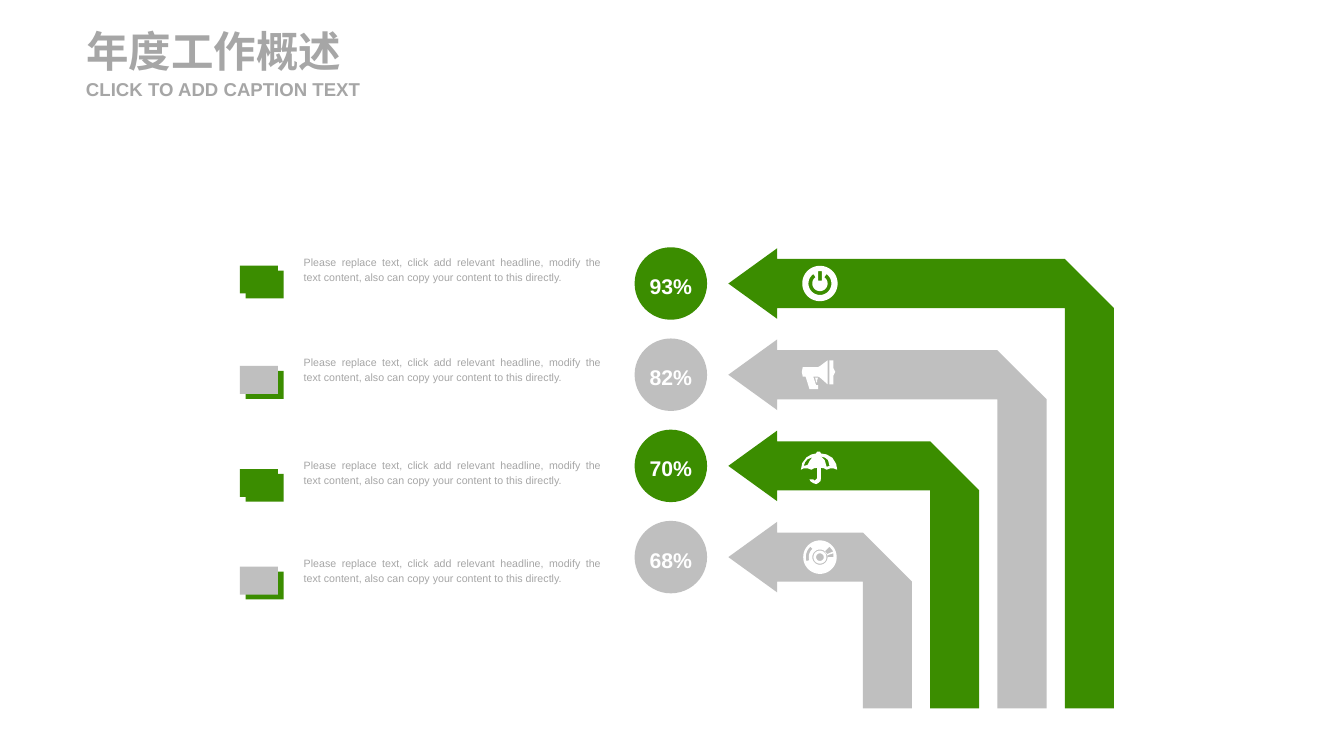
from math import cos, radians, sin

from pptx import Presentation
from pptx.dml.color import RGBColor
from pptx.enum import shapes, text
from pptx.util import Pt

COLORS = {"green": "3B8D00", "silver": "BFBFBF", "gray": "A6A6A6", "white": "FFFFFF"}
CAPTION = ("Please replace text, click add relevant headline, modify the text content, "
           "also can copy your content to this directly.")
ICON_UNIT = 0.72


def arc(radius, start=0, end=360, steps=60):
    """Return points on a circle, clockwise in degrees from the right."""
    angles = [radians(start + (end - start) * i / steps) for i in range(steps + 1)]
    return [(radius * cos(a), radius * sin(a)) for a in angles]


def band(outer, inner, start, end):
    """Return the outline of a curved band between two radii."""
    return arc(outer, start, end) + arc(inner, end, start)


ICONS = {
    "power": [
        arc(18.5),
        [(-2, -13), (-2, -3), (2, -3), (2, -13)],
        band(12, 8, -55, 235),
    ],
    "megaphone": [
        [(-18, -8), (-2, -8), (0, -9), (8, -15), (8, 10), (0, 3), (-2, 2), (-7, 2),
         (-4, 11), (-2, 11), (-2, 15), (-11, 15), (-15, 2), (-18, 2), (-19, -3)],
        [(14, -7), (16, -3), (14, 1), (14, 10), (10, 10), (10, -15), (14, -15)],
        [(-2, 3), (-5, 3), (-4, 8), (-3, 8), (-3, 6)],
    ],
    "umbrella": [
        [(-7, 14), (-6, 15), (-5, 15), (-4, 14), (-3, 13), (-3, 2), (-6, 2.4), (-9, 4),
         (-13, 2.5), (-17, 2.5), (-20, 4), (-18.5, -3), (-14, -9), (-9, -12), (-4, -13),
         (-3, -15), (0, -15), (1, -13), (7, -12), (13, -8.5), (17, -2), (18, 4),
         (14, 2.5), (11, 2.5), (7, 4), (4, 2.4), (1, 2), (1, 13), (0.5, 16), (-2, 18),
         (-4, 19), (-7, 18), (-10, 16), (-11, 14)],
        [(7, 1), (10, 0), (8.5, -6), (5.5, -8.5), (1, -10), (5, -6)],
        [(-17, 0), (-13, -1), (-11, -5), (-8, -9), (-13, -7), (-15.5, -4)],
    ],
    "disc": [
        arc(17.5), arc(8), arc(6.8), arc(4),
        band(14.8, 11.7, 164, 228),
        [(5, -6), (7, -3), (14, -6), (10, -11)],
        [(8, -2), (8, 0), (14, 0), (14, -4)],
    ],
}

ROWS = [
    ("93%", "green", "power", 187.2),
    ("82%", "silver", "megaphone", 262.8),
    ("70%", "green", "umbrella", 340.4),
    ("68%", "silver", "disc", 414),
]


def paint(sp, color):
    """Give a shape a plain fill with no line or shadow."""
    sp.shadow.inherit = False
    sp.fill.solid()
    sp.fill.fore_color.rgb = RGBColor.from_string(COLORS[color])
    sp.line.fill.background()


def preset(s, kind, box, color):
    """Add a plain preset shape in the given box."""
    sp = s.shapes.add_shape(kind, *map(Pt, box))
    paint(sp, color)
    return sp


def outline(s, contours, color):
    """Add a filled freeform made of closed contours."""
    emu = [[(Pt(x), Pt(y)) for x, y in contour] for contour in contours]
    builder = s.shapes.build_freeform(*emu[0][0])
    for i, contour in enumerate(emu):
        if i:
            builder.move_to(*contour[0])
        builder.add_line_segments(contour[1:], close=True)
    paint(builder.convert_to_shape(), color)


def write(sp, words, size, color="gray", bold=False, align="LEFT", anchor="MIDDLE",
          inset=(0, 0), spacing=1.0, wrap=True):
    """Fill a shape with one formatted paragraph."""
    tf = sp.text_frame
    tf.auto_size = text.MSO_AUTO_SIZE.NONE
    tf.word_wrap = wrap
    tf.vertical_anchor = text.MSO_ANCHOR[anchor]
    tf.margin_left = tf.margin_right = Pt(inset[0])
    tf.margin_top = tf.margin_bottom = Pt(inset[1])
    p = tf.paragraphs[0]
    p.alignment = text.PP_ALIGN[align]
    p.line_spacing = spacing
    r = p.add_run()
    r.text = words
    r.font.name = "Arial"
    r.font.size = Pt(size)
    r.font.bold = bold
    r.font.color.rgb = RGBColor.from_string(COLORS[color])


def heading(s, left, top, width):
    """Place the title and its subtitle."""
    title = s.shapes.title
    title.left, title.top, title.width, title.height = map(Pt, (left, top, width, 38.9))
    write(title, "年度工作概述", 32, bold=True)
    sub = s.shapes.add_textbox(Pt(left), Pt(top + 39.6), Pt(width), Pt(17.3))
    write(sub, "CLICK TO ADD CAPTION TEXT", 14, bold=True)


def legend(s, left, top, color):
    """Place a doubled swatch and its caption."""
    for dx, dy, fill in ((4.3, 3.7, "green"), (0, 0, color)):
        preset(s, shapes.MSO_SHAPE.RECTANGLE,
               (left + dx, top + 12.9 + dy, 28.6, 21), fill)
    sp = s.shapes.add_textbox(Pt(left + 41), Pt(top), Pt(238.3), Pt(29.5))
    write(sp, CAPTION, 8, align="JUSTIFY", anchor="TOP", inset=(7.2, 3.6), spacing=1.2)


def badge(s, left, middle, label, color):
    """Place a percentage in a circle."""
    size = 54.6
    sp = preset(s, shapes.MSO_SHAPE.OVAL, (left, middle - size / 2, size, size), color)
    write(sp, label, 16, color="white", bold=True, align="CENTER", spacing=1.2, wrap=False)


def bent_arrow(s, left, middle, right, bottom, color, icon):
    """Place an arrow that rises, bends left and carries an icon."""
    head, wing, bar = 36.8, 26.6, 37
    neck, inner = left + head, right - bar
    upper, lower = middle - bar / 2, middle + bar / 2
    outline(s, [[(left, middle), (neck, middle - wing), (neck, upper), (inner, upper),
                 (right, lower), (right, bottom), (inner, bottom), (inner, lower),
                 (neck, lower), (neck, middle + wing)]], color)
    cx = left + 69
    outline(s, [[(cx + x * ICON_UNIT, middle + y * ICON_UNIT) for x, y in contour]
                for contour in ICONS[icon]], "white")


def overview(s):
    """Lay out the heading and the four rows."""
    heading(s, 64.8, 18.7, 221)
    for i, (label, color, icon, caption_top) in enumerate(ROWS):
        middle = 213.6 + i * 68.7
        legend(s, 180.7, caption_top, color)
        badge(s, 478, middle, label, color)
        bent_arrow(s, 548.6, middle, 839 - i * 50.7, 533.7, color, icon)


def main():
    """Build and save the slide."""
    prs = Presentation()
    prs.slide_width, prs.slide_height = Pt(1012.3), Pt(569.5)
    overview(prs.slides.add_slide(prs.slide_layouts[5]))
    prs.save("out.pptx")


if __name__ == "__main__":
    main()
